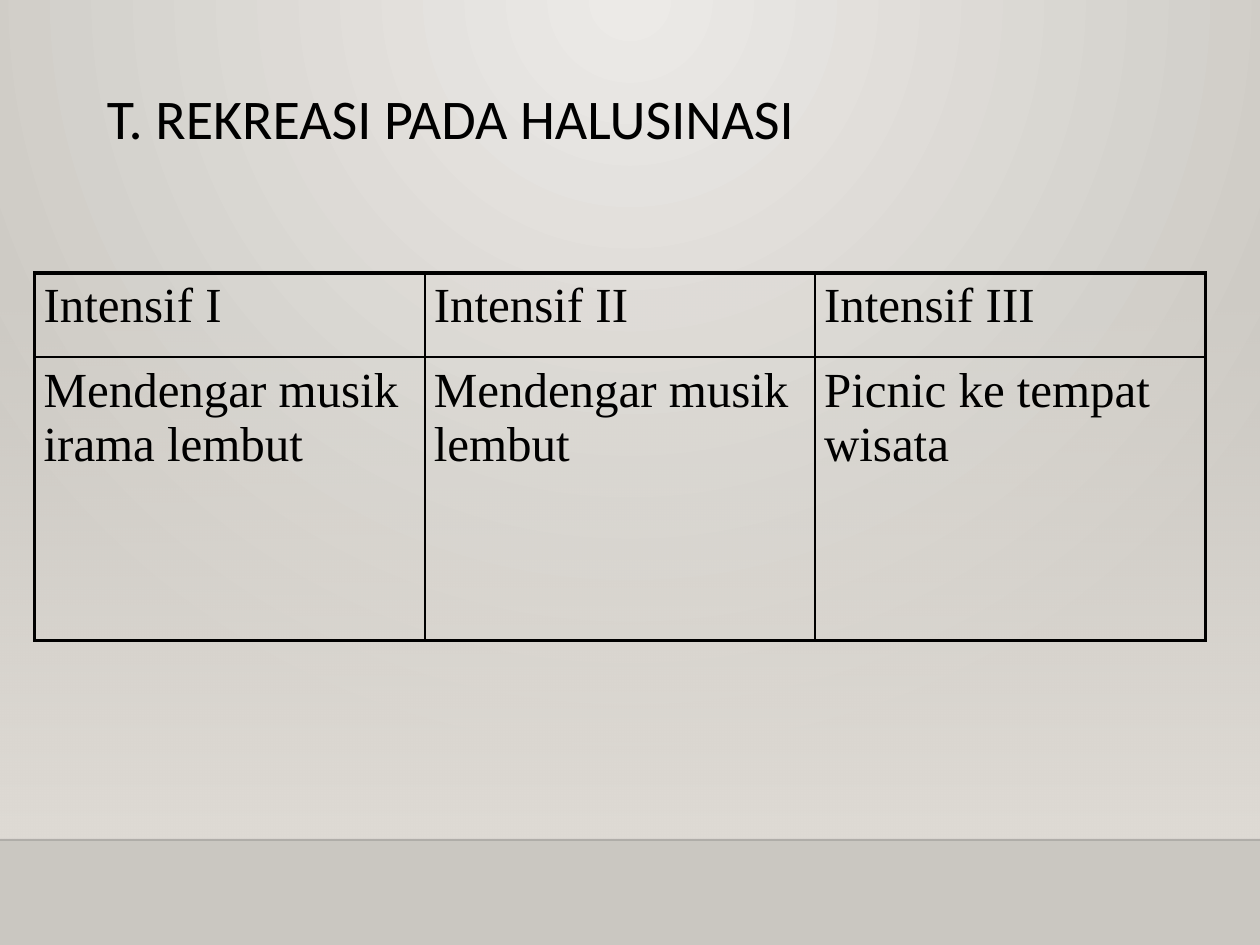
from dataclasses import dataclass

from lxml import etree
from pptx import Presentation
from pptx import util as u
from pptx.dml.color import RGBColor
from pptx.enum import shapes, text
from pptx.oxml.ns import qn


@dataclass(frozen=True)
class Theme:
    ink: str = "000000"
    horizon: str = "000001"
    glow: str = "ECEAE7"
    wall: str = "CAC7C1"
    haze: str = "DFDBD5"
    title_font: str = "Calibri"
    body_font: str = "Times New Roman"
    title_size: int = 32
    body_size: int = 28
    outer_line: float = 2.25
    inner_line: float = 1


THEME = Theme()
WIDTH, HEIGHT = u.Cm(25.4), u.Cm(19.05)
HORIZON = u.Cm(16.93)
ROWS = [
    ["Intensif I", "Intensif II", "Intensif III"],
    ["Mendengar musik irama lembut", "Mendengar musik lembut", "Picnic ke tempat wisata"],
]
ROW_HEIGHTS = [u.Cm(1.7), u.Cm(5.71)]


def rgb(color):
    return RGBColor.from_string(color)


def set_gradient(fill, colors):
    fill.gradient()
    for stop, color in zip(fill.gradient_stops, colors):
        stop.color.rgb = rgb(color)


def set_alpha(color_element, percent):
    etree.SubElement(color_element, qn("a:alpha"), val=str(percent * 1000))


def add_run(paragraph, words, font, size):
    run = paragraph.add_run()
    run.text = words
    run.font.name = font
    run.font.size = u.Pt(size)
    run.font.color.rgb = rgb(THEME.ink)


def paint_background(slide):
    set_gradient(slide.background.fill, [THEME.glow, THEME.wall])
    gradient = slide.element.xpath("./p:cSld/p:bg//a:gradFill")[0]
    gradient.remove(gradient.find(qn("a:lin")))
    circle = etree.SubElement(gradient, qn("a:path"), path="circle")
    etree.SubElement(circle, qn("a:fillToRect"), l="43000", t="0", r="43000", b="100000")


def add_haze(slide):
    top = u.Cm(5.6)
    haze = slide.shapes.add_shape(
        shapes.MSO_SHAPE.RECTANGLE, 0, top, WIDTH, HORIZON - top)
    haze.shadow.inherit = False
    haze.line.fill.background()
    set_gradient(haze.fill, [THEME.haze, THEME.haze])
    haze.fill.gradient_angle = 270
    set_alpha(haze.element.xpath(".//a:gs/a:srgbClr")[0], 0)


def add_horizon(slide):
    line = slide.shapes.add_connector(
        shapes.MSO_CONNECTOR.STRAIGHT, 0, HORIZON, WIDTH, HORIZON)
    line.line.width = u.Pt(1)
    line.line.color.rgb = rgb(THEME.horizon)
    set_alpha(line.element.xpath(".//a:ln//a:srgbClr")[0], 20)
    etree.SubElement(line.element.spPr, qn("a:effectLst"))


def add_title(slide, words):
    title = slide.shapes.title
    title.left, title.top = u.Cm(1.9), u.Cm(1.7)
    title.width, title.height = u.Cm(21.6), u.Cm(3.18)
    title.text_frame.vertical_anchor = text.MSO_ANCHOR.TOP
    paragraph = title.text_frame.paragraphs[0]
    paragraph.alignment = text.PP_ALIGN.LEFT
    paragraph.line_spacing = 0.9
    add_run(paragraph, words, THEME.title_font, THEME.title_size)
    # Keep the title in front of the backdrop
    slide.shapes.element.append(title.element)


def set_borders(cell, outer_sides):
    properties = cell._tc.get_or_add_tcPr()
    for side in "LRTB":
        points = THEME.outer_line if side in outer_sides else THEME.inner_line
        line = etree.SubElement(properties, qn(f"a:ln{side}"), w=str(u.Pt(points)))
        fill = etree.SubElement(line, qn("a:solidFill"))
        etree.SubElement(fill, qn("a:srgbClr"), val=THEME.ink)


def add_table(slide, rows):
    width = u.Cm(23.6)
    table = slide.shapes.add_table(
        len(rows), len(rows[0]), u.Cm(0.7), u.Cm(5.5), width, sum(ROW_HEIGHTS)).table
    table.first_row = table.horz_banding = False
    for column in table.columns:
        column.width = width // len(rows[0])
    for r, row in enumerate(rows):
        table.rows[r].height = ROW_HEIGHTS[r]
        for c, words in enumerate(row):
            cell = table.cell(r, c)
            edges = {"L": c == 0, "R": c == len(row) - 1,
                     "T": r == 0, "B": r == len(rows) - 1}
            set_borders(cell, [side for side, outer in edges.items() if outer])
            cell.fill.background()
            cell.margin_left = cell.margin_right = u.Cm(0.18)
            cell.margin_top = cell.margin_bottom = u.Cm(0.13)
            add_run(cell.text_frame.paragraphs[0], words,
                    THEME.body_font, THEME.body_size)


def main():
    presentation = Presentation()
    presentation.slide_width, presentation.slide_height = WIDTH, HEIGHT
    slide = presentation.slides.add_slide(presentation.slide_layouts[5])

    # Backdrop
    paint_background(slide)
    add_haze(slide)
    add_horizon(slide)

    # Content
    add_title(slide, "T. REKREASI PADA HALUSINASI")
    add_table(slide, ROWS)

    presentation.save("out.pptx")


if __name__ == "__main__":
    main()
